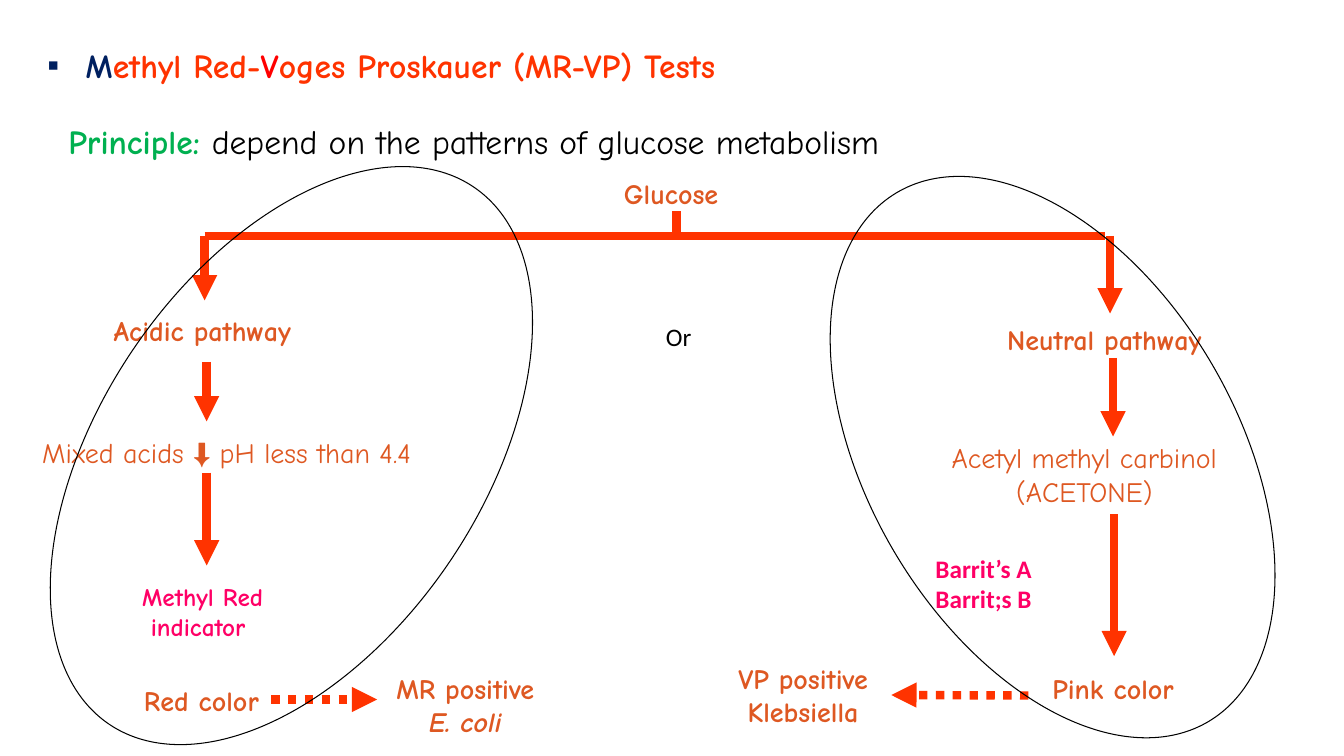
from pptx import Presentation
from pptx.dml.color import RGBColor
from pptx.enum.dml import MSO_LINE
from pptx.enum.shapes import MSO_CONNECTOR, MSO_SHAPE
from pptx.enum.text import MSO_ANCHOR, MSO_AUTO_SIZE, PP_ALIGN
from pptx.oxml.ns import qn
from pptx.util import Inches, Pt
from lxml import etree

RED, ORANGE, PINK, BLACK = "FF3300", "DE5822", "FF0066", "000000"


def add_run(p, text, size=20, color=ORANGE, bold=True, italic=False, font="Comic Neue"):
    r = p.add_run()
    r.text = text
    r.font.size = Pt(size)
    r.font.bold = bold
    r.font.italic = italic
    r.font.name = font
    r.font.color.rgb = RGBColor.from_string(color)


def add_line(shapes, x1, y1, x2, y2, arrow=True, dotted=False):
    c = shapes.add_connector(MSO_CONNECTOR.STRAIGHT, Inches(x1), Inches(y1), Inches(x2), Inches(y2))
    c.line.color.rgb = RGBColor.from_string(RED)
    c.line.width = Pt(6)
    if dotted:
        c.line.dash_style = MSO_LINE.ROUND_DOT
        c.line._ln.find(qn("a:prstDash")).set("val", "sysDot")
    if arrow:
        etree.SubElement(c.line._ln, qn("a:tailEnd"), type="triangle")
    etree.SubElement(c._element.spPr, qn("a:effectLst"))
    return c


prs = Presentation()
prs.slide_width, prs.slide_height = Inches(13.33), Inches(7.5)
s = prs.slides.add_slide(prs.slide_layouts[5])

title = s.shapes.title
title.left, title.top, title.width, title.height = Inches(0.37), Inches(0.3), Inches(12.96), Inches(0.69)
tf = title.text_frame
tf.vertical_anchor = MSO_ANCHOR.MIDDLE
tf.auto_size = MSO_AUTO_SIZE.NONE
p = tf.paragraphs[0]
p.alignment = PP_ALIGN.LEFT
for text, color in [("M", "002060"), ("ethyl Red-", RED), ("V", "FF0000"),
                    ("oges Proskauer (MR-VP) Tests", RED)]:
    add_run(p, text, size=24, color=color)
pPr = p._p.get_or_add_pPr()
pPr.set("marL", str(Inches(0.38)))
pPr.set("indent", str(Inches(-0.38)))
etree.SubElement(pPr, qn("a:buFont"), typeface="Arial")
etree.SubElement(pPr, qn("a:buChar"), char="▪")

tree = s.shapes.add_group_shape()
for x1, y1, x2, y2, arrow in [
    (2.03, 2.34, 10.96, 2.34, False),
    (2.03, 2.34, 2.03, 2.98, True),
    (11.01, 2.34, 11.01, 3.11, True),
    (6.71, 2.34, 6.71, 2.09, False),
]:
    add_line(tree.shapes, x1, y1, x2, y2, arrow)

L, C = PP_ALIGN.LEFT, PP_ALIGN.CENTER
plain = {"bold": False}
pink = {"size": 18, "color": PINK}
labels = [
    (0.58, 1.15, 11.91, 0.5, True, L, [[("Principle: ", {"size": 24, "color": "00B050"}),
     ("depend on the patterns of glucose metabolism", {"size": 24, "color": BLACK, "bold": False})]]),
    (6.09, 1.7, 1.27, 0.44, True, L, [[("Glucose", {})]]),
    (1.03, 3.06, 2.24, 0.44, False, L, [[("Acidic pathway", {})]]),
    (0.32, 4.27, 4.08, 0.77, True, L, [[("Mixed acids ⬇ pH less than 4.4", plain)]]),
    (1.03, 5.72, 1.96, 0.71, True, C, [[("Methyl Red", pink)], [("indicator ", pink)]]),
    (1.33, 6.73, 1.47, 0.44, False, L, [[("Red color", {})]]),
    (3.74, 6.61, 1.75, 0.77, True, C, [[("MR positive", {})], [("E. coli", {"italic": True})]]),
    (6.37, 3.14, 0.72, 0.4, True, C,
     [[("Or", {"size": 18, "color": BLACK, "bold": False, "font": "Calibri"})]]),
    (9.89, 3.15, 2.45, 0.44, False, L, [[("Neutral pathway", {})]]),
    (9.18, 4.32, 3.15, 0.77, False, C, [[("Acetyl methyl carbinol", plain)], [("(ACETONE)", plain)]]),
    (9.18, 5.44, 1.35, 0.71, False, L,
     [[(text, {**pink, "font": "Calibri"})] for text in ("Barrit’s A", "Barrit;s B")]),
    (10.34, 6.61, 1.5, 0.44, False, L, [[("Pink color", {})]]),
    (7.09, 6.51, 1.75, 0.77, True, C, [[("VP positive", {})], [("Klebsiella", {})]]),
]
for x, y, w, h, wrap, align, paragraphs in labels:
    box = s.shapes.add_textbox(Inches(x), Inches(y), Inches(w), Inches(h))
    tf = box.text_frame
    tf.word_wrap = wrap
    tf.auto_size = MSO_AUTO_SIZE.SHAPE_TO_FIT_TEXT
    for i, runs in enumerate(paragraphs):
        p = tf.add_paragraph() if i else tf.paragraphs[0]
        p.alignment = align
        for text, style in runs:
            add_run(p, text, **style)
vp_box = box

for x, y1, y2 in [(2.05, 3.59, 4.18), (2.05, 4.69, 5.61), (11.04, 3.55, 4.33), (11.05, 5.1, 6.51)]:
    add_line(s.shapes, x, y1, x, y2)
add_line(s.shapes, 2.69, 6.94, 3.74, 6.94, dotted=True)
vp_arrow = add_line(s.shapes, 10.2, 6.9, 8.84, 6.9, dotted=True)
vp_arrow.end_connect(vp_box, 3)

for x, y, w, h, angle in [(1, 1.3, 3.78, 6.44, 34.2), (8.61, 1.49, 3.66, 6.09, 329.6)]:
    oval = s.shapes.add_shape(MSO_SHAPE.OVAL, Inches(x), Inches(y), Inches(w), Inches(h))
    oval.rotation = angle
    oval.shadow.inherit = False
    oval.fill.background()
    oval.line.color.rgb = RGBColor.from_string(BLACK)
    oval.line.width = Pt(0.75)

prs.save("out.pptx")
